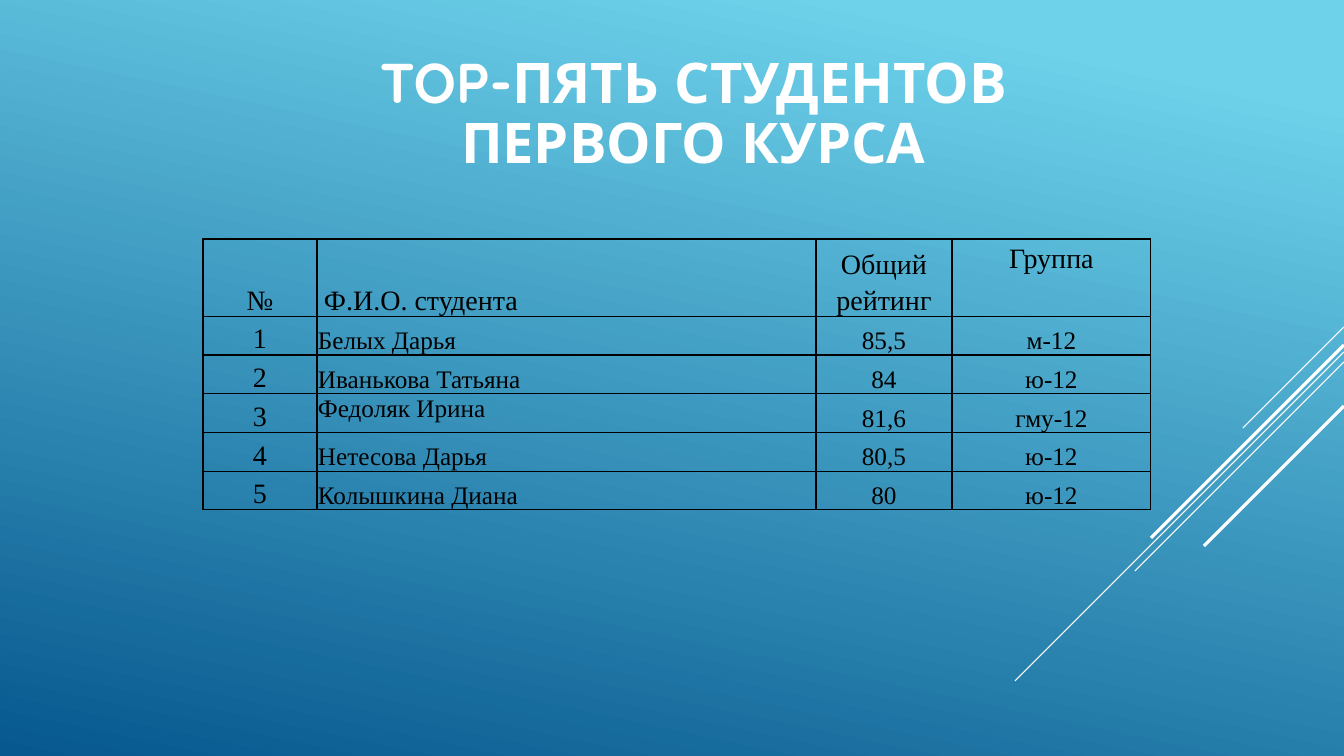
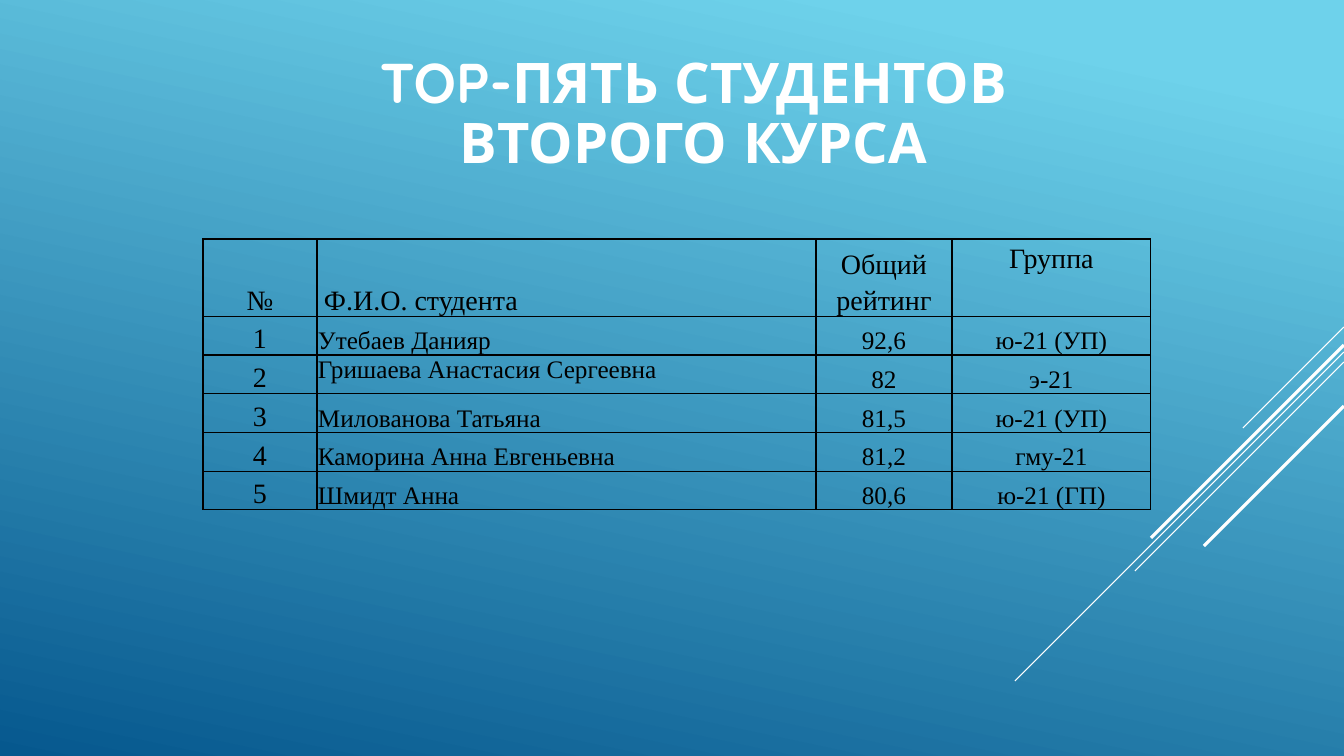
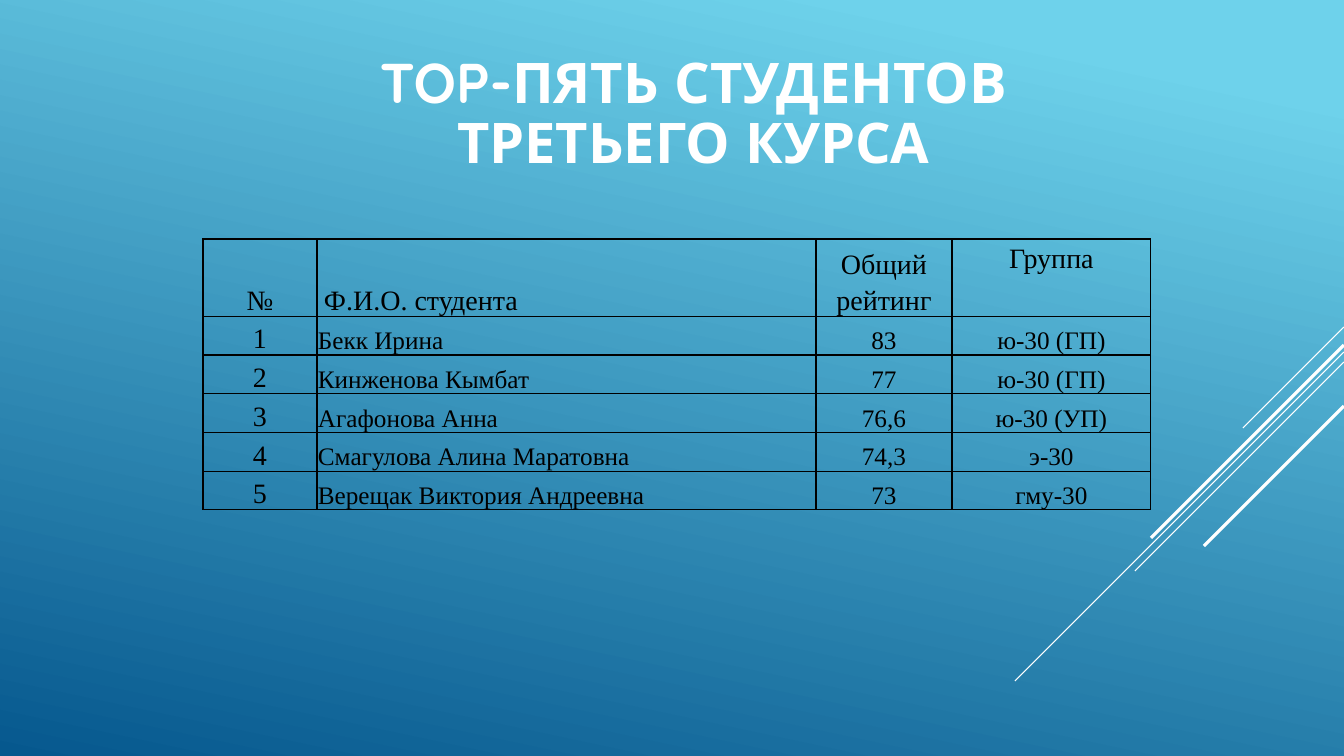
from lxml.etree import SubElement
from pptx import Presentation
from pptx.dml.color import RGBColor
from pptx.enum.shapes import MSO_CONNECTOR
from pptx.enum.text import MSO_ANCHOR, PP_ALIGN
from pptx.oxml import parse_xml
from pptx.oxml.ns import nsdecls, qn
from pptx.util import Pt

SLIDE_WIDTH, SLIDE_HEIGHT = 1344, 756
EMU_PER_PX = 12192000 / SLIDE_WIDTH
COLORS = {"sky": "6ED2EB", "deep": "06588E", "white": "FFFFFF", "black": "000000"}
TITLE_FONT, TABLE_FONT = "Quicksand", "Times New Roman"

TITLE_BOX = (293, 98, 801, 83)
TABLE_BOX = (203, 239, 948, 252)
COLUMN_WIDTHS = (114, 499, 136, 199)
ROW_HEIGHTS = (72, 36, 36, 37, 36, 36)
HEADERS = ("№", "Ф.И.О. студента", "Общий рейтинг", "Группа")
TOP_ANCHORED = {"Группа", "Федоляк Ирина", "Гришаева Анастасия Сергеевна"}
DIAGONALS = ((327, 101, 0.75), (352, 329, 0.75), (362, 209, 0.75),
             (345, 193, 2.25), (406, 140, 2.25))

COURSES = {
    "ПЕРВОГО": (
        ("Белых Дарья", "85,5", "м-12"),
        ("Иванькова Татьяна", "84", "ю-12"),
        ("Федоляк Ирина", "81,6", "гму-12"),
        ("Нетесова Дарья", "80,5", "ю-12"),
        ("Колышкина Диана", "80", "ю-12"),
    ),
    "ВТОРОГО": (
        ("Утебаев Данияр", "92,6", "ю-21 (УП)"),
        ("Гришаева Анастасия Сергеевна", "82", "э-21"),
        ("Милованова Татьяна", "81,5", "ю-21 (УП)"),
        ("Каморина Анна Евгеньевна", "81,2", "гму-21"),
        ("Шмидт Анна", "80,6", "ю-21 (ГП)"),
    ),
    "ТРЕТЬЕГО": (
        ("Бекк Ирина", "83", "ю-30 (ГП)"),
        ("Кинженова Кымбат", "77", "ю-30 (ГП)"),
        ("Агафонова Анна", "76,6", "ю-30 (УП)"),
        ("Смагулова Алина Маратовна", "74,3", "э-30"),
        ("Верещак Виктория Андреевна", "73", "гму-30"),
    ),
}


def px(length):
    """Convert pixels to EMU."""
    return round(length * EMU_PER_PX)


def color(name):
    """Return a palette colour."""
    return RGBColor.from_string(COLORS[name])


def write_text(frame, text, *, font, size, fill, bold=False,
               align=PP_ALIGN.CENTER, spacing=None):
    """Write one formatted paragraph into a text frame."""
    paragraph = frame.paragraphs[0]
    paragraph.alignment = align
    paragraph.line_spacing = spacing
    run = paragraph.add_run()
    run.text = text
    run.font.name = font
    run.font.size = Pt(size)
    run.font.bold = bold
    run.font.color.rgb = color(fill)


def set_background(master):
    """Give the master the diagonal blue gradient."""
    fill = master.background.fill
    fill.gradient()
    fill.gradient_angle = 360 - 102
    for stop, name, position in zip(fill.gradient_stops, ("sky", "deep"), (0.1, 1)):
        stop.color.rgb = color(name)
        stop.position = position


def add_diagonals(slide, right):
    """Draw the 45-degree lines that run down and left from the right edge."""
    group = slide.shapes.add_group_shape()
    for top, reach, weight in DIAGONALS:
        line = group.shapes.add_connector(
            MSO_CONNECTOR.STRAIGHT, px(right), px(top), px(right - reach), px(top + reach))
        line.line.color.rgb = color("white")
        line.line.width = Pt(weight)
        SubElement(line._element.spPr, qn("a:effectLst"))


def add_title(slide, box, text):
    """Place the centred title, standing on the bottom of its box."""
    frame = slide.shapes.add_textbox(*map(px, box)).text_frame
    frame.word_wrap = True
    frame.vertical_anchor = MSO_ANCHOR.BOTTOM
    write_text(frame, text, font=TITLE_FONT, size=40, fill="white", bold=True, spacing=0.9)


def set_borders(cell):
    """Outline a cell on all four sides."""
    properties = cell._tc.get_or_add_tcPr()
    for index, side in enumerate("LRTB"):
        properties.insert(index, parse_xml(
            f'<a:ln{side} {nsdecls("a")} w="{Pt(1)}"><a:solidFill>'
            f'<a:srgbClr val="{COLORS["black"]}"/></a:solidFill></a:ln{side}>'))


def fill_cell(cell, text, is_label, align):
    """Format one cell as a label (header or number) or as student data."""
    side, top = (7, 0) if is_label else (1, 1)
    cell.margin_left = cell.margin_right = px(side)
    cell.margin_top, cell.margin_bottom = px(top), 0
    cell.vertical_anchor = MSO_ANCHOR.TOP if text in TOP_ANCHORED else MSO_ANCHOR.BOTTOM
    cell.fill.background()
    set_borders(cell)
    write_text(cell.text_frame, text, font=TABLE_FONT, size=20 if is_label else 18,
               fill="black", align=align, spacing=1.15 if is_label else None)


def add_rating_table(slide, box, students):
    """Place the numbered rating table in its box."""
    rows = [HEADERS] + [(str(number), *student) for number, student in enumerate(students, 1)]
    table = slide.shapes.add_table(len(rows), len(HEADERS), *map(px, box)).table
    table.first_row = table.horz_banding = False
    for column, width in zip(table.columns, COLUMN_WIDTHS):
        column.width = px(width)
    for row, height in zip(table.rows, ROW_HEIGHTS):
        row.height = px(height)
    for row_index, row in enumerate(rows):
        for column_index, text in enumerate(row):
            align = PP_ALIGN.LEFT if column_index == 1 else PP_ALIGN.CENTER
            fill_cell(table.cell(row_index, column_index), text,
                      row_index == 0 or column_index == 0, align)


def add_course_slide(presentation, course, students):
    """Build the slide of one course."""
    slide = presentation.slides.add_slide(presentation.slide_layouts[6])
    add_diagonals(slide, SLIDE_WIDTH)
    add_title(slide, TITLE_BOX, f"TOP-ПЯТЬ СТУДЕНТОВ {course} КУРСА")
    add_rating_table(slide, TABLE_BOX, students)


def main():
    """Build and save the presentation."""
    presentation = Presentation()
    presentation.slide_width, presentation.slide_height = px(SLIDE_WIDTH), px(SLIDE_HEIGHT)
    set_background(presentation.slide_master)
    for course, students in COURSES.items():
        add_course_slide(presentation, course, students)
    presentation.save("out.pptx")


if __name__ == "__main__":
    main()
